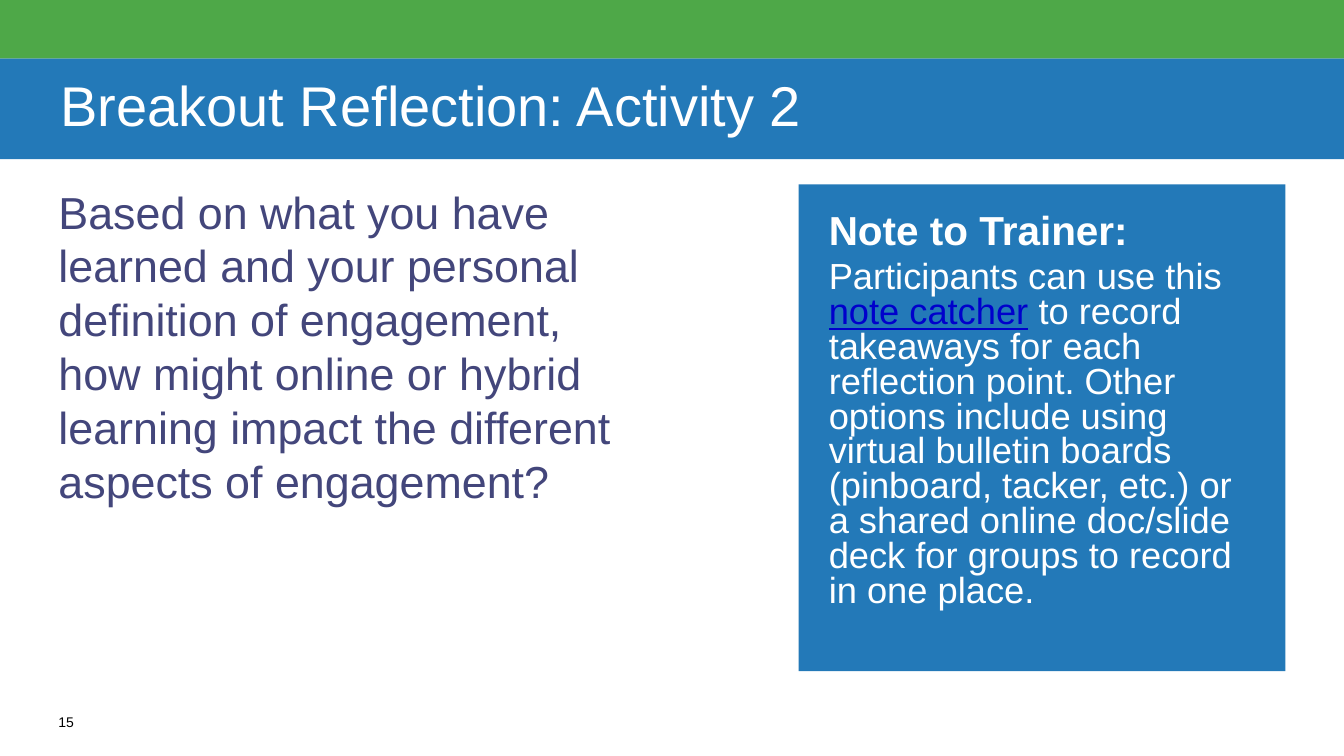
from pptx import Presentation
from pptx.dml.color import RGBColor
from pptx.enum.shapes import MSO_SHAPE
from pptx.enum.text import MSO_ANCHOR, MSO_AUTO_SIZE, PP_ALIGN
from pptx.util import Inches, Pt

RECT = MSO_SHAPE.RECTANGLE
TOP, MIDDLE = MSO_ANCHOR.TOP, MSO_ANCHOR.MIDDLE
LEFT, NO_FIT = PP_ALIGN.LEFT, MSO_AUTO_SIZE.NONE

# Content: each paragraph is a list of (text, style) runs
TITLE = [[("Breakout Reflection: Activity 2", "title")]]
QUESTION = [[("Based on what you have learned and your personal definition of "
              "engagement, how might online or hybrid learning impact the "
              "different aspects of engagement?", "question")]]
NOTE = [
    [("Note to Trainer:", "heading")],
    [("Participants can use this ", "note"),
     ("note catcher", "link"),
     (" to record takeaways for each reflection point. Other options include "
      "using virtual bulletin boards (pinboard, tacker, etc.) or a shared "
      "online doc/slide deck for groups to record in one place.", "note")],
]
NUMBER = [[("15", "number")]]

THEME = {
    "font": "Arial",
    "green": "4EA848",
    "blue": "2379B8",
    "title": {"size": 40, "color": "FFFFFF"},
    "question": {"size": 32, "color": "43467B"},
    "heading": {"size": 28.9, "color": "FFFFFF", "bold": True},
    "note": {"size": 25.9, "color": "FFFFFF"},
    "link": {"size": 25.9, "color": "0000CC", "underline": True},
    "number": {"size": 10, "color": "000000"},
}

# Layout in inches
WIDTH, HEIGHT = 13.33, 7.5
BAND, TITLE_H = 0.58, 1
MARGIN, BODY_TOP = 0.58, 1.83
NOTE_SIDE = 4.83
NOTE_LEFT = WIDTH - MARGIN - NOTE_SIDE


def place(s, left, top, width, height):
    s.left, s.top = Inches(left), Inches(top)
    s.width, s.height = Inches(width), Inches(height)


def paint(s, color):
    s.fill.solid()
    s.fill.fore_color.rgb = RGBColor.from_string(color)
    s.line.fill.background()


def write(s, paragraphs, pad_x=0, pad_y=0, anchor=TOP, **spacing):
    tf = s.text_frame
    frame = {"word_wrap": True, "auto_size": NO_FIT, "vertical_anchor": anchor,
             "margin_left": Inches(pad_x), "margin_right": Inches(pad_x),
             "margin_top": Inches(pad_y), "margin_bottom": Inches(pad_y)}
    for name, value in frame.items():
        setattr(tf, name, value)
    for i, runs in enumerate(paragraphs):
        p = tf.add_paragraph() if i else tf.paragraphs[0]
        p.alignment = LEFT
        p.space_before = Pt(6 if i else 0)
        for name, value in spacing.items():
            setattr(p, name, value)
        for text, style in runs:
            r = p.add_run()
            r.text = text
            look = dict(THEME[style])
            r.font.name = THEME["font"]
            r.font.color.rgb = RGBColor.from_string(look.pop("color"))
            r.font.size = Pt(look.pop("size"))
            for name, value in look.items():
                setattr(r.font, name, value)


def add_box(slide, color, *box):
    s = slide.shapes.add_shape(RECT, *map(Inches, box))
    s.shadow.inherit = False
    paint(s, color)
    return s


def add_text(slide, paragraphs, *box):
    s = slide.shapes.add_textbox(*map(Inches, box))
    write(s, paragraphs)


def main():
    prs = Presentation()
    prs.slide_width, prs.slide_height = Inches(WIDTH), Inches(HEIGHT)
    slide = prs.slides.add_slide(prs.slide_layouts[5])

    # Top band and title bar
    add_box(slide, THEME["green"], 0, 0, WIDTH, BAND)
    title = slide.shapes.title
    place(title, 0, BAND, WIDTH, TITLE_H)
    paint(title, THEME["blue"])
    write(title, TITLE, pad_x=0.6, anchor=MIDDLE, line_spacing=0.9)

    # Reflection question
    add_text(slide, QUESTION, MARGIN, BODY_TOP, 5.83, 3.23)

    # Trainer note
    note = add_box(slide, THEME["blue"], NOTE_LEFT, BODY_TOP, NOTE_SIDE, NOTE_SIDE)
    write(note, NOTE, pad_x=0.3, pad_y=0.3, line_spacing=0.8)

    # Slide number
    add_text(slide, NUMBER, MARGIN, 7.08, 0.42, 0.25)

    prs.save("out.pptx")


if __name__ == "__main__":
    main()
